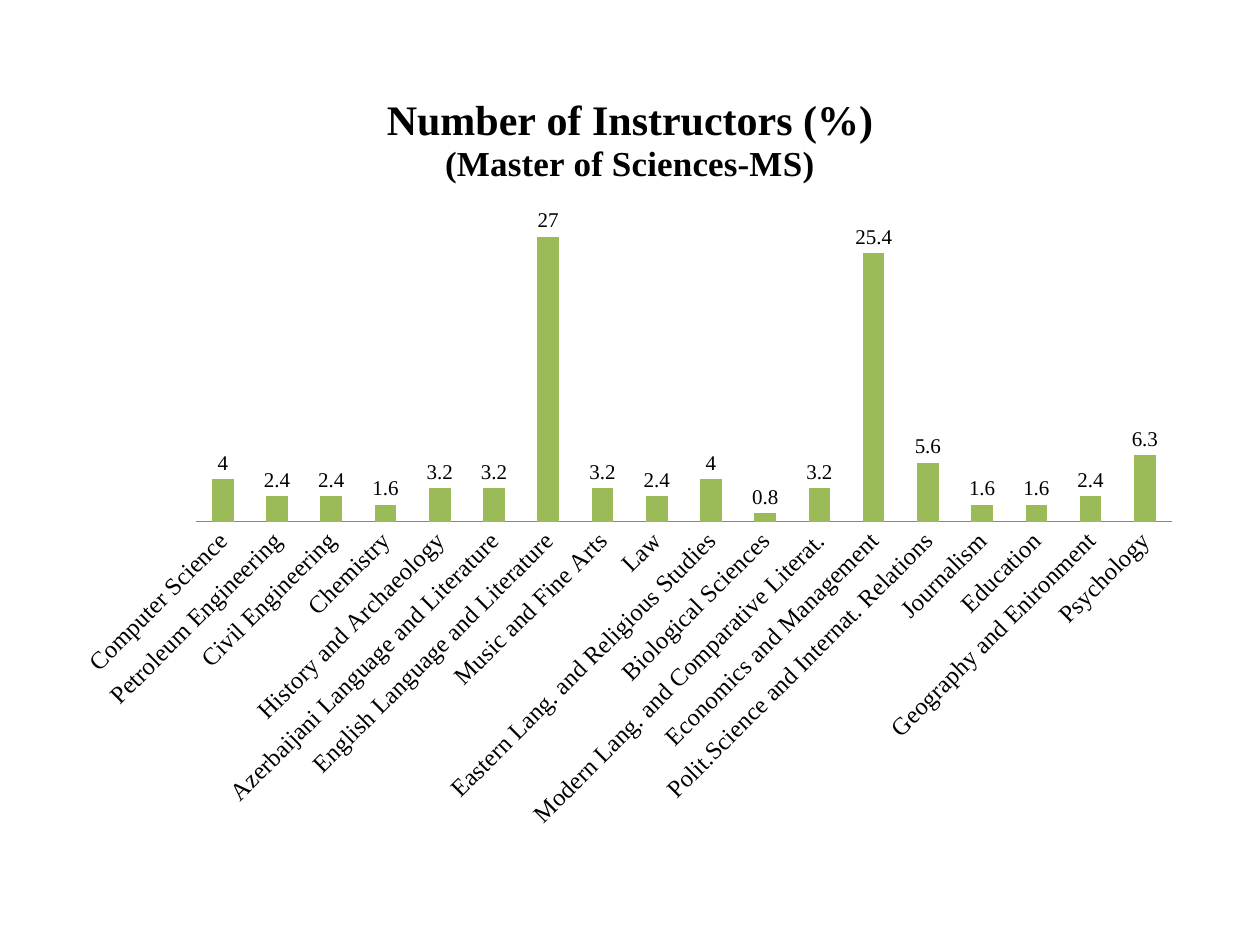
from pptx import Presentation
from pptx.chart.data import CategoryChartData
from pptx.dml.color import RGBColor
from pptx.enum.chart import XL_CHART_TYPE, XL_LABEL_POSITION, XL_TICK_MARK
from pptx.oxml import parse_xml
from pptx.oxml.ns import nsdecls, qn
from pptx.util import Pt


def style(font, size, bold=False, color="000000"):
    font.name = "Times New Roman"
    font.size = Pt(size)
    font.bold = bold
    font.color.rgb = RGBColor.from_string(color)


deck = Presentation()
deck.slide_width, deck.slide_height = Pt(720), Pt(540)
slide = deck.slides.add_slide(deck.slide_layouts[6])

# Share of instructors by department
shares = {
    "Computer Science": 4,
    "Petroleum Engineering": 2.4,
    "Civil Engineering": 2.4,
    "Chemistry": 1.6,
    "History and Archaeology": 3.2,
    "Azerbaijani Language and Literature": 3.2,
    "English Language and Literature": 27,
    "Music and Fine Arts": 3.2,
    "Law": 2.4,
    "Eastern Lang. and Religious Studies": 4,
    "Biological Sciences": 0.8,
    "Modern Lang. and Comparative Literat.": 3.2,
    "Economics and Management": 25.4,
    "Polit.Science and Internat. Relations": 5.6,
    "Journalism": 1.6,
    "Education": 1.6,
    "Geography and Enironment": 2.4,
    "Psychology": 6.3,
}
data = CategoryChartData()
data.categories = list(shares)
data.add_series("Series 1", list(shares.values()))

# Chart
chart = slide.shapes.add_chart(
    XL_CHART_TYPE.COLUMN_CLUSTERED, Pt(36), Pt(39.6), Pt(648), Pt(442.8), data
).chart
chart.has_legend = False
chart.font.name = "Calibri"
chart.font.size = Pt(10)

# Title
title = chart.chart_title.text_frame
title.text = "Number of Instructors (%)\n(Master of Sciences-MS)"
for para, size in zip(title.paragraphs, (24, 20)):
    style(para.font, size, True)
    for run in para.runs:
        style(run.font, size, True)
chart.chart_title.include_in_layout = False

# Columns
plot = chart.plots[0]
plot.gap_width = 150
plot.overlap = -25
plot.vary_by_categories = False
fill = plot.series[0].format.fill
fill.solid()
fill.fore_color.rgb = RGBColor.from_string("9BBB59")

# Value labels
plot.has_data_labels = True
labels = plot.data_labels
labels.show_value = True
labels.position = XL_LABEL_POSITION.OUTSIDE_END
style(labels.font, 12)

# Axes
scale = chart.value_axis
scale.minimum_scale, scale.maximum_scale = 0, 30
scale.has_major_gridlines = False
scale.visible = False
axis = chart.category_axis
axis.major_tick_mark = XL_TICK_MARK.NONE
axis.format.line.color.rgb = RGBColor.from_string("868686")
style(axis.tick_labels.font, 14)
body = axis.tick_labels.font._element.getparent().getparent().getparent().find(qn("a:bodyPr"))
if body is None:
    body = chart._chartSpace.find(".//" + qn("c:catAx")).find(".//" + qn("a:bodyPr"))
body.set("rot", "-2700000")
body.set("vert", "horz")

# Plot area within the chart
area = chart._chartSpace.find(".//" + qn("c:plotArea"))
for old in area.findall(qn("c:layout")):
    area.remove(old)
spots = (("x", 0.117), ("y", 0.175), ("w", 0.861), ("h", 0.409))
area.insert(0, parse_xml(
    f'<c:layout {nsdecls("c")}><c:manualLayout><c:layoutTarget val="inner"/>'
    '<c:xMode val="edge"/><c:yMode val="edge"/>'
    + "".join(f'<c:{key} val="{val}"/>' for key, val in spots)
    + "</c:manualLayout></c:layout>"
))

deck.save("out.pptx")
